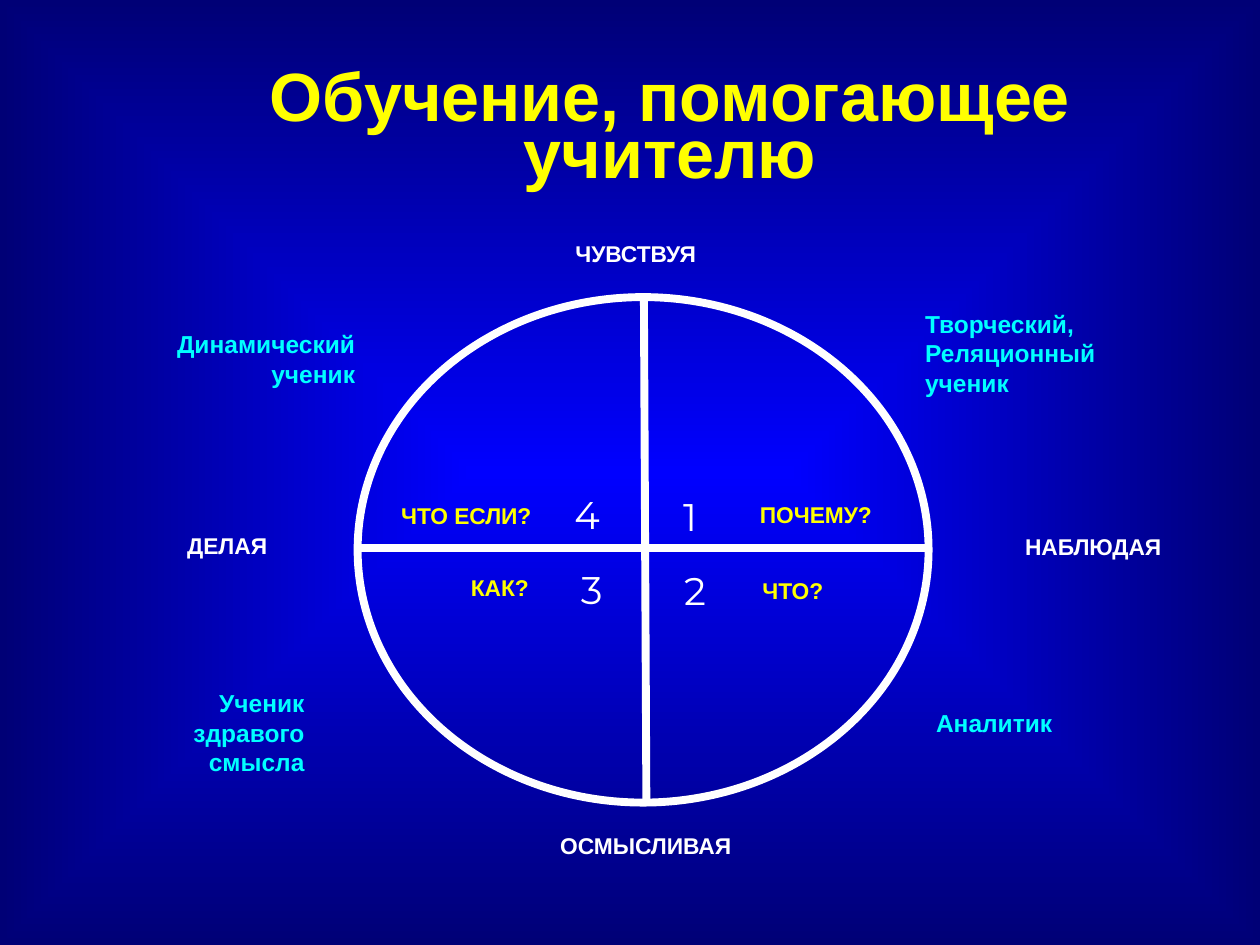
import pptx
import pptx.util
import pptx.dml.color
import pptx.enum.shapes
import pptx.enum.text
import pptx.oxml
import pptx.oxml.ns
from lxml import etree

Cm = pptx.util.Cm
Pt = pptx.util.Pt
RGBColor = pptx.dml.color.RGBColor
ALIGN = pptx.enum.text.PP_ALIGN
ANCHOR = pptx.enum.text.MSO_ANCHOR
qn = pptx.oxml.ns.qn

WHITE = RGBColor(0xFF, 0xFF, 0xFF)
YELLOW = RGBColor(0xFF, 0xFF, 0x00)
CYAN = RGBColor(0x00, 0xFF, 0xFF)
BLUE = RGBColor(0x00, 0x00, 0xFF)
NAVY = RGBColor(0x00, 0x00, 0x76)

TITLE = "Обучение, помогающее учителю"
TITLE_FRAME = (2.79, 1.3, 21.44, 3.0)
CIRCLE = (7.21, 5.99, 11.51, 10.19)
AXES = [(7.24, 11.05, 18.72, 11.05), (12.98, 5.94, 13.03, 16.13)]
AXIS_WIDTH = 4.5

STYLES = {
    "question": (13, "Arial", YELLOW, True),
    "learner": (14, "Arial", CYAN, True),
    "number": (22, "Montserrat", WHITE, False),
    "process": (13, "Arial", WHITE, True),
}
LABELS = [
    ("question", ALIGN.RIGHT, [
        ("ЧТО ЕСЛИ?", 7.49, 10.01, 3.45, 0.79),
        ("КАК?", 8.48, 11.46, 2.41, 0.79),
    ]),
    ("question", ALIGN.LEFT, [
        ("ПОЧЕМУ?", 15.09, 9.98, 2.92, 0.79),
        ("ЧТО?", 15.14, 11.51, 3.0, 0.79),
    ]),
    ("learner", ALIGN.LEFT, [
        ("Творческий,\vРеляционный ученик", 18.42, 6.12, 4.04, 2.03),
        ("Аналитик", 18.64, 14.17, 3.07, 0.84),
    ]),
    ("learner", ALIGN.RIGHT, [
        ("Динамический ученик", 2.74, 6.53, 4.65, 1.42),
        ("Ученик здравого смысла", 3.3, 13.77, 3.07, 2.03),
    ]),
    ("number", ALIGN.LEFT, [
        ("4", 11.35, 9.78, 1.04, 1.12),
        ("3", 11.48, 11.3, 1.04, 1.12),
        ("1", 13.54, 9.83, 1.04, 1.12),
        ("2", 13.56, 11.33, 1.04, 1.12),
    ]),
    ("process", ALIGN.CENTER, [
        ("НАБЛЮДАЯ", 18.67, 10.64, 6.73, 0.79),
        ("ДЕЛАЯ", 2.74, 10.62, 3.68, 0.79),
        ("ЧУВСТВУЯ", 9.45, 4.72, 6.73, 0.79),
        ("ОСМЫСЛИВАЯ", 9.7, 16.66, 6.63, 0.79),
    ]),
]


def lengths(values):
    return [Cm(value) for value in values]


def paint_background(page):
    fill = page.background.fill
    fill.gradient()
    for stop, color in zip(fill.gradient_stops, (BLUE, NAVY)):
        stop.color.rgb = color
    gradient = page.element.find(".//" + qn("a:gradFill"))
    direction = gradient.find(qn("a:lin"))
    shading = etree.Element(qn("a:path"), path="shape")
    etree.SubElement(shading, qn("a:fillToRect"), l="50000", t="50000", r="50000", b="50000")
    gradient.replace(direction, shading)


def add_text(page, text, frame, style, align, margins):
    size, font, color, bold = style
    box = page.shapes.add_textbox(*lengths(frame))
    body = box.text_frame
    body.word_wrap = True
    body.margin_left, body.margin_top, body.margin_right, body.margin_bottom = lengths(margins)
    body.text = text
    para = body.paragraphs[0]
    para.alignment = align
    for span in para.runs:
        span.font.size = Pt(size)
        span.font.name = font
        span.font.bold = bold
        span.font.color.rgb = color
    return body


def add_wheel(page):
    circle = page.shapes.add_shape(pptx.enum.shapes.MSO_SHAPE.OVAL, *lengths(CIRCLE))
    circle.shadow.inherit = False
    circle.fill.background()
    axes = [
        page.shapes.add_connector(pptx.enum.shapes.MSO_CONNECTOR.STRAIGHT, *lengths(ends))
        for ends in AXES
    ]
    for axis in axes:
        etree.SubElement(axis._element.spPr, qn("a:effectLst"))
    for outline in [circle, *axes]:
        outline.line.color.rgb = WHITE
        outline.line.width = Pt(AXIS_WIDTH)


def main():
    deck = pptx.Presentation()
    deck.slide_width, deck.slide_height = lengths((25.4, 19.05))
    page = deck.slides.add_slide(deck.slide_layouts[6])
    paint_background(page)
    add_wheel(page)
    for style, align, items in LABELS:
        for text, *frame in items:
            body = add_text(page, text, frame, STYLES[style], align, (0.23, 0.11, 0.23, 0.11))
            body.auto_size = pptx.enum.text.MSO_AUTO_SIZE.SHAPE_TO_FIT_TEXT
    title = add_text(page, TITLE, TITLE_FRAME, (39, "Arial", YELLOW, True),
                     ALIGN.CENTER, (0.25, 0.13, 0.25, 0.38))
    title.vertical_anchor = ANCHOR.MIDDLE
    title.paragraphs[0].line_spacing = 0.7
    deck.save("out.pptx")


if __name__ == "__main__":
    main()
